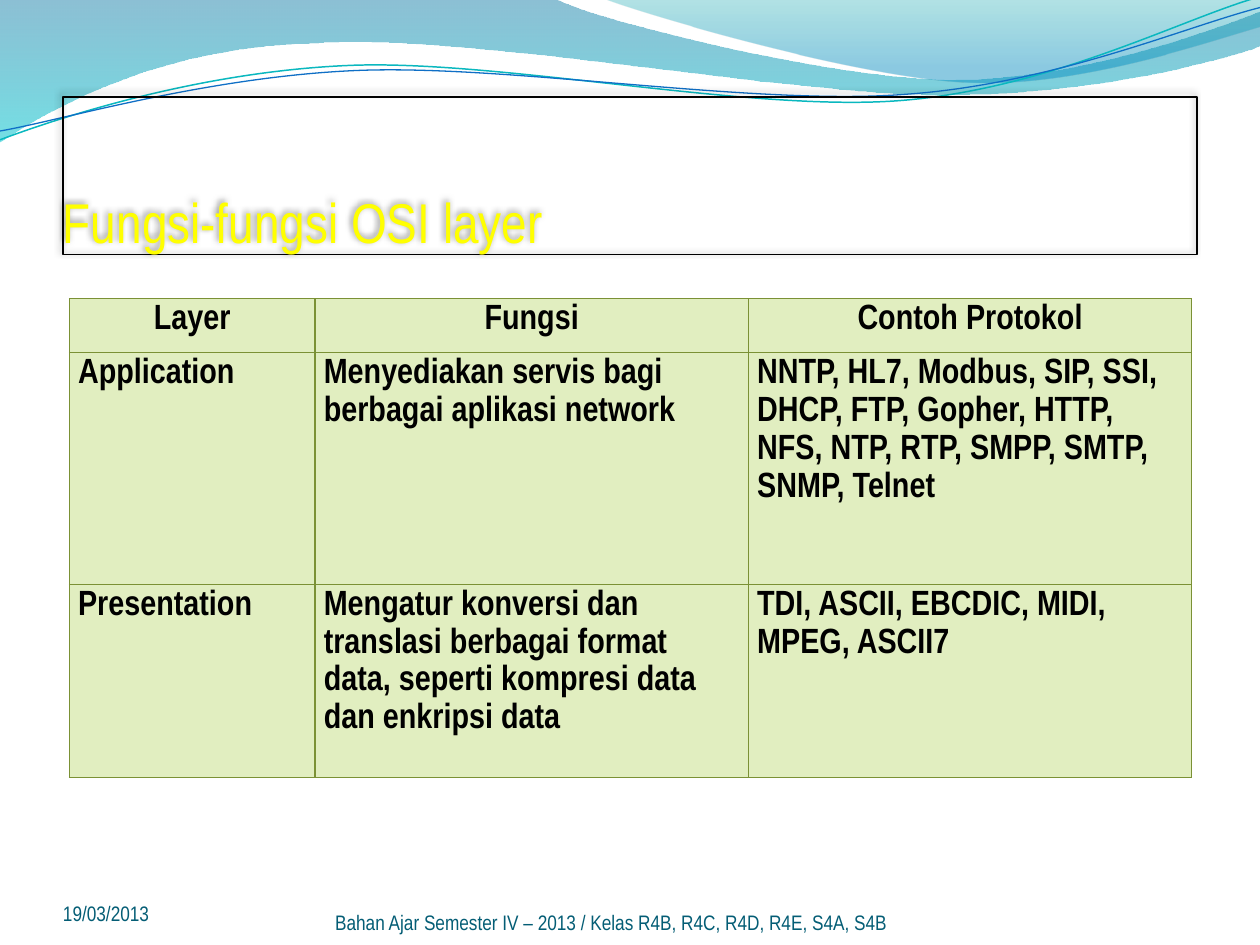
from lxml.etree import SubElement
from pptx import Presentation
from pptx.dml.color import RGBColor
from pptx.enum.text import MSO_ANCHOR, PP_ALIGN
from pptx.oxml import parse_xml
from pptx.oxml.ns import nsdecls, qn
from pptx.util import Inches, Pt

FONT = "Arial Narrow"
COLORS = {
    "title": "FFFF00", "text": "000000", "footer": "045D75",
    "cell": "E1EEC0", "border": "7B9135",
    "blue": "0074A1", "cyan": "00C6CF", "teal": "00A1A9", "sky": "008BBF",
    "teal line": "0AB8BF", "blue line": "0F6FC6",
}

# Each outline is a list of pieces: 2 numbers are a corner, 6 are a cubic curve.
LEFT_WAVE = [
    (0, 0), (4.4, -0.01), (4.76, 0.17, 6.64, 0.63, 7.58, 0.63),
    (8.53, 0.63, 9.58, 0.26, 10, 0.09), (10.01, 0.36),
    (9.83, 0.44, 8.7, 0.76, 7.46, 0.75), (6.22, 0.75, 3.82, 0.28, 2.57, 0.34),
    (1.29, 0.36, 0.46, 0.83, -0.01, 1.13),
]
RIGHT_WAVE = [
    (4.79, -0.01), (5.09, 0.11, 6.82, 0.62, 7.69, 0.65),
    (8.56, 0.69, 9.61, 0.32, 10, 0.21), (10, 0),
]
TEAL_CURVE = [
    (0, 1.11), (0.48, 0.93, 1.58, 0.57, 2.77, 0.52),
    (3.95, 0.47, 5.93, 0.89, 7.13, 0.8), (8.33, 0.71, 9.38, 0.15, 9.98, -0.02),
]
BLUE_CURVE = [
    (0, 1.04), (0.47, 0.96, 1.64, 0.61, 2.83, 0.56),
    (4.03, 0.51, 5.97, 0.84, 7.17, 0.75), (8.36, 0.67, 9.41, 0.21, 10, 0.06),
]

COLUMN_WIDTHS = [1.95, 3.44, 3.52]
ROW_HEIGHTS = [0.43, 1.84, 1.28]
ROWS = [
    ("Layer", "Fungsi", "Contoh Protokol"),
    ("Application", "Menyediakan servis bagi berbagai aplikasi network",
     "NNTP, HL7, Modbus, SIP, SSI, DHCP, FTP, Gopher, HTTP, NFS, NTP, RTP, "
     "SMPP, SMTP, SNMP, Telnet"),
    ("Presentation", "Mengatur konversi dan translasi berbagai format data, "
     "seperti kompresi data dan enkripsi data",
     "TDI, ASCII, EBCDIC, MIDI, MPEG, ASCII7"),
]


def color(name):
    return RGBColor.from_string(COLORS[name])


def add_outline(slide, pieces, close):
    """Build the outline through its corners, then bend the curved segments."""
    corners = [tuple(map(Inches, piece[-2:])) for piece in pieces]
    builder = slide.shapes.build_freeform(*corners[0])
    builder.add_line_segments(corners[1:], close=close)
    shape = builder.convert_to_shape()
    shape.shadow.inherit = False
    segments = list(shape.element.spPr.iter(qn("a:lnTo")))
    for segment, piece in zip(segments, pieces[1:]):
        if len(piece) == 6:
            curve = parse_xml(f'<a:cubicBezTo {nsdecls("a")}/>')
            for x, y in zip(piece[::2], piece[1::2]):
                SubElement(curve, qn("a:pt"), x=str(Inches(x) - shape.left),
                           y=str(Inches(y) - shape.top))
            segment.getparent().replace(segment, curve)
    return shape


def add_wave(slide, pieces, stops):
    """Fill a wave downwards; each stop is (position, color, opacity percent)."""
    shape = add_outline(slide, pieces, close=True)
    shape.line.fill.background()
    shape.fill.gradient()
    shape.fill.gradient_angle = 270
    for gradient_stop, (position, name, _) in zip(shape.fill.gradient_stops, stops):
        gradient_stop.position = position
        gradient_stop.color.rgb = color(name)
    for element, (_, _, opacity) in zip(shape.element.spPr.iter(qn("a:srgbClr")), stops):
        SubElement(element, qn("a:alpha"), val=str(opacity * 1000))


def add_curve(slide, pieces, name, width):
    shape = add_outline(slide, pieces, close=False)
    shape.fill.background()
    shape.line.color.rgb = color(name)
    shape.line.width = Pt(width)


def write(text_frame, text, size, name, bold=False):
    text_frame.text = text
    text_frame.word_wrap = True
    paragraph = text_frame.paragraphs[0]
    font = paragraph.runs[0].font
    font.name, font.size, font.bold = FONT, Pt(size), bold
    font.color.rgb = color(name)
    return paragraph


def add_text(slide, box, text, size, name):
    shape = slide.shapes.add_textbox(*map(Inches, box))
    text_frame = shape.text_frame
    write(text_frame, text, size, name)
    text_frame.vertical_anchor = MSO_ANCHOR.BOTTOM
    text_frame.margin_left = text_frame.margin_right = 0
    text_frame.margin_top = text_frame.margin_bottom = 0
    return shape


def add_title(slide):
    shape = add_text(slide, (0.5, 0.77, 9, 1.25), "Fungsi-fungsi OSI layer", 32, "title")
    shape.text_frame.margin_top = Inches(0.05)
    shape.line.color.rgb = color("text")
    shape.line.width = Pt(0.75)
    shape.element.spPr.append(parse_xml(
        f'<a:effectLst {nsdecls("a")}>'
        f'<a:outerShdw blurRad="{Pt(4)}" dist="{Pt(3)}" dir="13500000">'
        f'<a:srgbClr val="{COLORS["text"]}"><a:alpha val="40000"/></a:srgbClr>'
        '</a:outerShdw></a:effectLst>'))


def add_borders(cell):
    properties = cell._tc.get_or_add_tcPr()
    for index, side in enumerate(("lnL", "lnR", "lnT", "lnB")):
        properties.insert(index, parse_xml(
            f'<a:{side} {nsdecls("a")} w="{Pt(0.75)}"><a:solidFill>'
            f'<a:srgbClr val="{COLORS["border"]}"/></a:solidFill></a:{side}>'))


def add_layer_table(slide):
    frame = slide.shapes.add_table(
        len(ROWS), len(COLUMN_WIDTHS), Inches(0.55), Inches(2.37),
        Inches(sum(COLUMN_WIDTHS)), Inches(sum(ROW_HEIGHTS)))
    table = frame.table
    table.first_row = table.horz_banding = False
    for column, width in zip(table.columns, COLUMN_WIDTHS):
        column.width = Inches(width)
    for row_index, (row, height) in enumerate(zip(table.rows, ROW_HEIGHTS)):
        row.height = Inches(height)
        for column_index, cell in enumerate(row.cells):
            cell.margin_left = cell.margin_right = Inches(0.07)
            cell.margin_top = cell.margin_bottom = 0
            cell.fill.solid()
            cell.fill.fore_color.rgb = color("cell")
            add_borders(cell)
            paragraph = write(cell.text_frame, ROWS[row_index][column_index],
                              20, "text", bold=True)
            paragraph.line_spacing = 1.15
            if row_index == 0:
                paragraph.alignment = PP_ALIGN.CENTER
            elif column_index == 0:
                paragraph.alignment = PP_ALIGN.JUSTIFY
    frame.height = Inches(3.8)


def main():
    presentation = Presentation()
    presentation.slide_width, presentation.slide_height = Inches(10), Inches(7.5)
    slide = presentation.slides.add_slide(presentation.slide_layouts[6])
    add_wave(slide, LEFT_WAVE, [(0, "blue", 45), (1, "cyan", 55)])
    add_wave(slide, RIGHT_WAVE, [(0, "teal", 30), (0.8, "sky", 45)])
    add_curve(slide, TEAL_CURVE, "teal line", 0.85)
    add_curve(slide, BLUE_CURVE, "blue line", 0.75)
    add_title(slide)
    add_layer_table(slide)
    add_text(slide, (0.5, 6.95, 2.33, 0.4), "19/03/2013", 12, "footer")
    add_text(slide, (2.66, 7.02, 5.33, 0.4),
             "Bahan Ajar Semester IV – 2013 / Kelas R4B, R4C, R4D, R4E, S4A, S4B",
             12, "footer")
    presentation.save("out.pptx")


if __name__ == "__main__":
    main()
